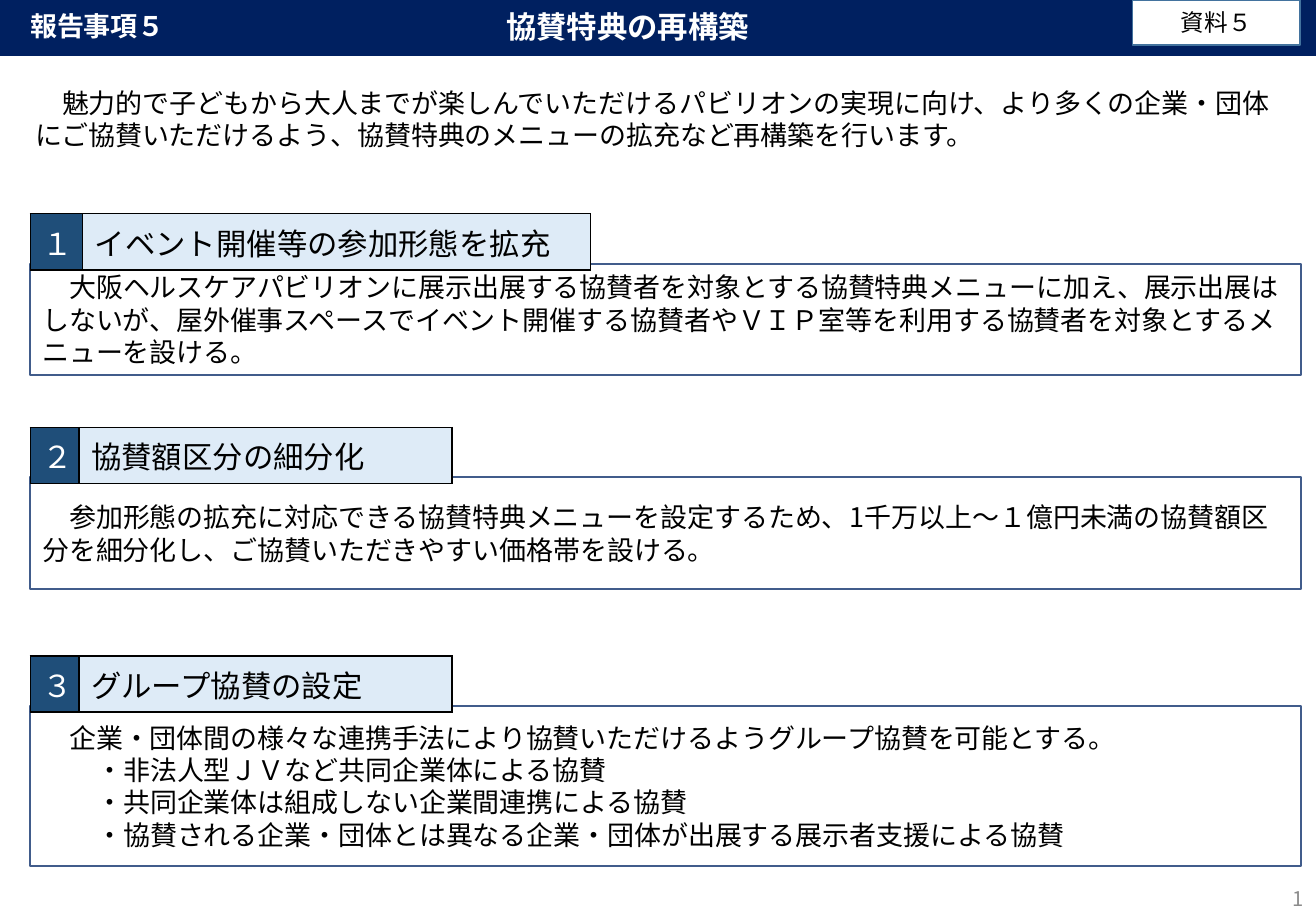
from lxml.etree import SubElement
from pptx import Presentation
from pptx.dml.color import RGBColor
from pptx.enum.shapes import MSO_SHAPE
from pptx.enum.text import MSO_ANCHOR, PP_ALIGN
from pptx.oxml.ns import qn
from pptx.util import Inches, Pt

THEME = dict(
    font="Noto Sans CJK JP",
    navy="002060", number="1F4E79", heading="DEEBF7", frame="415C8B",
    tag_line="43739E", black="000000", white="FFFFFF", gray="8C8C8C",
    title=18, body=16, tag=14, page=12,
)
W, H = 10.83, 7.5
LEFT, WIDE = 0.25, 10.46
HEAD_H = 0.41
EM = THEME["body"] / 72  # one full-width character of body text

prs = Presentation()
prs.slide_width, prs.slide_height = Inches(W), Inches(H)
s = prs.slides.add_slide(prs.slide_layouts[5])


def write(tf, lines, size="body", color="black", bold=False, align=PP_ALIGN.LEFT,
          anchor=MSO_ANCHOR.MIDDLE):
    """Fill a text frame; each line is (text, left margin, first-line indent) in characters."""
    for name, value in dict(word_wrap=True, vertical_anchor=anchor).items():
        setattr(tf, name, value)
    for i, (text, margin, indent) in enumerate(lines):
        p = tf.paragraphs[0] if i == 0 else tf.add_paragraph()
        p.alignment = align
        pPr = p._p.get_or_add_pPr()
        pPr.set("marL", str(Inches(margin * EM)))
        pPr.set("indent", str(Inches(indent * EM)))
        r = p.add_run()
        r.text = text
        formats = dict(name=THEME["font"], size=Pt(THEME[size]), bold=bold)
        for name, value in formats.items():
            setattr(r.font, name, value)
        r.font.color.rgb = RGBColor.from_string(THEME[color])
        SubElement(r._r.get_or_add_rPr(), qn("a:ea"), typeface=THEME["font"])


def add_box(left, top, width, height, line, weight, fill=None):
    sp = s.shapes.add_shape(MSO_SHAPE.RECTANGLE, Inches(left), Inches(top),
                            Inches(width), Inches(height))
    sp.shadow.inherit = False
    sp.line.color.rgb = RGBColor.from_string(THEME[line])
    sp.line.width = Pt(weight)
    if fill:
        sp.fill.solid()
        sp.fill.fore_color.rgb = RGBColor.from_string(THEME[fill])
    else:
        sp.fill.background()
    return sp.text_frame


# Title band
title = s.shapes.title
band = dict(left=0, top=-0.03, width=W, height=0.49)
for name, value in band.items():
    setattr(title, name, Inches(value))
title.fill.solid()
title.fill.fore_color.rgb = RGBColor.from_string(THEME["navy"])
title.text_frame.margin_right = Inches(0.6)
write(title.text_frame, [("協賛特典の再構築", 0, 0)], "title", "white", True, PP_ALIGN.CENTER)

# Numbered sections: frame top, frame height, heading widths, heading, body
sections = [
    (2.17, 0.92, (0.43, 4.18), "１", "イベント開催等の参加形態を拡充", [
        ("大阪ヘルスケアパビリオンに展示出展する協賛者を対象とする協賛特典メニューに加え、"
         "展示出展はしないが、屋外催事スペースでイベント開催する協賛者やＶＩＰ室等を利用する"
         "協賛者を対象とするメニューを設ける。", 0, 1)]),
    (3.93, 0.92, (0.4, 3.07), "２", "協賛額区分の細分化", [
        ("参加形態の拡充に対応できる協賛特典メニューを設定するため、1千万以上～１億円未満の"
         "協賛額区分を細分化し、ご協賛いただきやすい価格帯を設ける。", 0, 1)]),
    (5.81, 1.32, (0.4, 3.07), "３", "グループ協賛の設定", [
        ("企業・団体間の様々な連携手法により協賛いただけるようグループ協賛を可能とする。", 0, 1),
        ("・非法人型ＪＶなど共同企業体による協賛", 2, 0),
        ("・共同企業体は組成しない企業間連携による協賛", 2, 0),
        ("・協賛される企業・団体とは異なる企業・団体が出展する展示者支援による協賛", 2, 0)]),
]
for top, height, widths, number, heading, body in sections:
    write(add_box(LEFT, top, WIDE, height, "frame", 1.25), body)
    table = s.shapes.add_table(1, 2, Inches(LEFT), Inches(top - HEAD_H),
                               Inches(sum(widths)), Inches(HEAD_H)).table
    table.first_row = table.horz_banding = False
    cells = [(number, "number", "white", PP_ALIGN.CENTER),
             (heading, "heading", "black", PP_ALIGN.LEFT)]
    for col, (text, fill, color, align) in enumerate(cells):
        table.columns[col].width = Inches(widths[col])
        cell = table.cell(0, col)
        write(cell.text_frame, [(text, 0, 0)], "title", color, align=align,
              anchor=MSO_ANCHOR.TOP)
        tcPr = cell._tc.get_or_add_tcPr()
        for side in ("lnL", "lnR", "lnT", "lnB"):
            ln = SubElement(tcPr, qn(f"a:{side}"), w=str(Pt(1)))
            SubElement(SubElement(ln, qn("a:solidFill")), qn("a:srgbClr"), val=THEME["black"])
        cell.fill.solid()
        cell.fill.fore_color.rgb = RGBColor.from_string(THEME[fill])

# Document tag
write(add_box(9.32, 0, 1.38, 0.37, "tag_line", 1, "white"), [("資料５", 0, 0)], "tag",
      align=PP_ALIGN.CENTER)

# Free text: place, lines, format
texts = [
    ((0.19, 0.66, WIDE, 0.64),
     [("魅力的で子どもから大人までが楽しんでいただけるパビリオンの実現に向け、より多くの企業・"
       "団体にご協賛いただけるよう、協賛特典のメニューの拡充など再構築を行います。", 0, 1)],
     dict(anchor=MSO_ANCHOR.TOP)),
    ((0.15, 0.03, 1.61, 0.37), [("報告事項５", 0, 0)],
     dict(color="white", bold=True, anchor=MSO_ANCHOR.TOP)),
    ((8.4, 7.2, W - 8.4, 0.4), [("1", 0, 0)],
     dict(size="page", color="gray", align=PP_ALIGN.RIGHT)),
]
for place, lines, formats in texts:
    sp = s.shapes.add_textbox(*map(Inches, place))
    write(sp.text_frame, lines, **formats)

prs.save("out.pptx")
